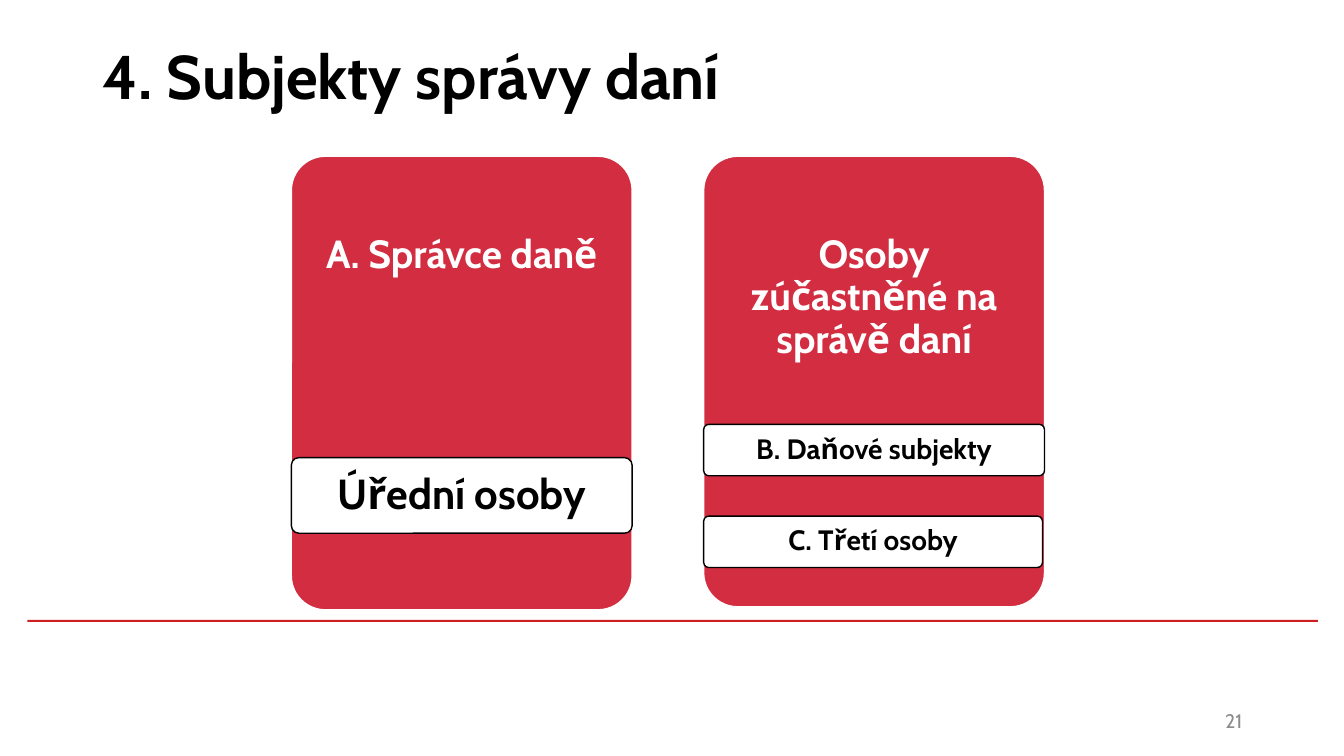
from pptx import Presentation
from pptx.dml.color import RGBColor
from pptx.enum.shapes import MSO_SHAPE
from pptx.enum.text import MSO_ANCHOR, PP_ALIGN
from pptx.util import Inches, Pt

WIDTH, HEIGHT = Inches(13.33), Inches(7.5)
FONT = "Cabin"
RED = RGBColor(0xD2, 0x2D, 0x40)
RULE_RED = RGBColor(0xCD, 0x1F, 0x21)
WHITE = RGBColor(0xFF, 0xFF, 0xFF)
BLACK = RGBColor(0, 0, 0)
GREY = RGBColor(0x8C, 0x8C, 0x8C)

CARD_TOP, CARD_WIDTH = 20.67, 25.36
CARDS = [
    ("A. Správce daně", 21.68, 60, 30, [("Úřední osoby", 60.53, 10, CARD_WIDTH)]),
    ("Osoby zúčastněné na správě daní", 52.36, 59.6, 20, [
        ("B. Daňové subjekty", 56.13, 6.8, CARD_WIDTH),
        ("C. Třetí osoby", 68.27, 6.8, 25.21),
    ]),
]


def area(left, top, width, height):
    """Turn percentages of the slide into a position and a size."""
    return (int(WIDTH * left / 100), int(HEIGHT * top / 100),
            int(WIDTH * width / 100), int(HEIGHT * height / 100))


def write(shape, text, size, color, bold, alignment, anchor=MSO_ANCHOR.MIDDLE):
    """Put one formatted paragraph into a shape and return it."""
    frame = shape.text_frame
    frame.word_wrap = True
    frame.vertical_anchor = anchor
    paragraph = frame.paragraphs[0]
    paragraph.text = text
    paragraph.alignment = alignment
    font = paragraph.font
    font.name, font.size, font.bold = FONT, Pt(size), bold
    font.color.rgb = color
    return paragraph


def add_box(slide, kind, place, fill, line=None):
    """Add a filled shape with an optional thin outline."""
    shape = slide.shapes.add_shape(kind, *area(*place))
    shape.shadow.inherit = False
    shape.fill.solid()
    shape.fill.fore_color.rgb = fill
    if line is None:
        shape.line.fill.background()
    else:
        shape.line.color.rgb = line
        shape.line.width = Pt(1)
    return shape


def add_rounded(slide, place, fill, line, text, size, color, anchor, margins):
    """Add a rounded box with centred bold text."""
    shape = add_box(slide, MSO_SHAPE.ROUNDED_RECTANGLE, place, fill, line)
    shape.adjustments[0] = 0.1
    frame = shape.text_frame
    frame.margin_left = frame.margin_right = Inches(0.12)
    frame.margin_top, frame.margin_bottom = map(Inches, margins)
    paragraph = write(shape, text, size, color, True, PP_ALIGN.CENTER, anchor)
    paragraph.line_spacing = 0.9


def add_card(slide, heading, left, height, label_size, labels):
    """Add a red card and the white labels lying across it."""
    add_rounded(slide, (left, CARD_TOP, CARD_WIDTH, height), RED, WHITE,
                heading, 28, WHITE, MSO_ANCHOR.TOP, (0.68, 0.12))
    for text, top, label_height, width in labels:
        add_rounded(slide, (left, top, width, label_height), WHITE, BLACK,
                    text, label_size, BLACK, MSO_ANCHOR.MIDDLE, (0.08, 0.08))


def main():
    """Build the slide and save it."""
    presentation = Presentation()
    presentation.slide_width, presentation.slide_height = WIDTH, HEIGHT
    slide = presentation.slides.add_slide(presentation.slide_layouts[5])

    title = slide.shapes.title
    title.left, title.top, title.width, title.height = area(6.9, 0.27, 86.27, 19.33)
    write(title, "4. Subjekty správy daní", 44, BLACK, True, PP_ALIGN.LEFT)

    add_box(slide, MSO_SHAPE.RECTANGLE, (2.03, 82, 96.02, 0.27), RULE_RED)
    for card in CARDS:
        add_card(slide, *card)

    number = slide.shapes.add_textbox(*area(70.67, 92.67, 22.5, 5.33))
    write(number, "21", 14, GREY, False, PP_ALIGN.RIGHT)
    presentation.save("out.pptx")


if __name__ == "__main__":
    main()
